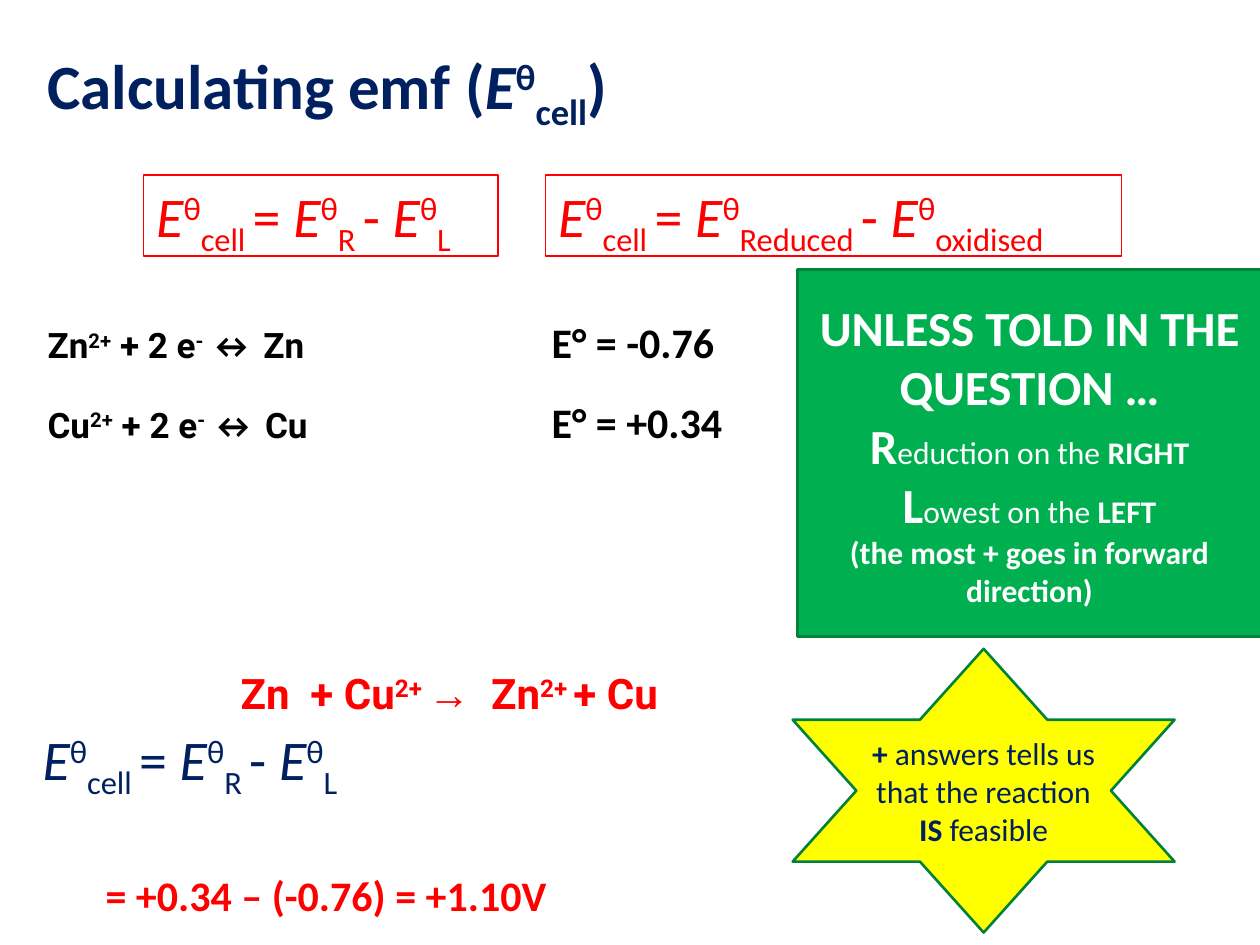
from lxml import etree
from pptx import Presentation
from pptx.dml.color import RGBColor
from pptx.enum.shapes import MSO_SHAPE
from pptx.enum.text import MSO_ANCHOR, PP_ALIGN
from pptx.oxml.ns import qn
from pptx.util import Cm, Pt

RECTANGLE, STAR = MSO_SHAPE.RECTANGLE, MSO_SHAPE.STAR_6_POINT
TOP, MIDDLE = MSO_ANCHOR.TOP, MSO_ANCHOR.MIDDLE
LEFT, CENTER = PP_ALIGN.LEFT, PP_ALIGN.CENTER

NAVY, RED, BLACK, WHITE = "002060", "FF0000", "000000", "FFFFFF"
GREEN, DARK_GREEN, YELLOW = "00B050", "00823B", "FFFF00"
MARGIN = 0.71
POTENTIAL_TAB = 10.16

SUPER, SUB = {"baseline": 30000}, {"baseline": -25000}
ITALIC, BOLD, PLAIN = {"italic": True}, {"bold": True}, {"bold": False}
CALIBRI = {"name": "Calibri"}


def cell_equation(first, second):
    runs = []
    for label, link in (("cell", "= "), (first, "- "), (second, "")):
        ending = " " if link else ""
        runs += [("E", ITALIC), ("θ", SUPER), (label + ending, SUB)]
        if link:
            runs.append((link, {}))
    return runs


def half_equation(metal, potential):
    return [
        (metal, {}), ("2+", SUPER), (" + 2 e", {}), ("- ", SUPER),
        ("↔", CALIBRI), (f" {metal}\t", {}),
        (f"E° = {potential}", {"name": "Calibri", "size": 24}),
        (" ", {"size": 28}),
    ]


def rule_line(initial, rest, side):
    return [(initial, {"size": 28, "bold": True}), (rest, {}), (side, BOLD)]


def font(name, size, color, bold=False):
    return {"name": name, "size": size, "color": color, "bold": bold}


HALF_FONT = font("Roboto", 20, BLACK, True)
FORMULA_FONT = font("Calibri", 32, RED)
FORMULA_BOX = {"preset": RECTANGLE, "line": (RED, 0.75)}

ITEMS = [
    {"at": (MARGIN, 0.91, 22.86, 1.78), "anchor": MIDDLE,
     "font": font("Calibri", 36, NAVY, True),
     "paragraphs": [[("Calculating emf (", {}), ("E", ITALIC), ("θ", SUPER),
                     ("cell", SUB), (")", {})]]},
    {"at": (MARGIN, 6.12, 14.88, 1.45), "font": HALF_FONT, "tab": POTENTIAL_TAB,
     "paragraphs": [half_equation("Zn", "-0.76")]},
    {"at": (MARGIN, 7.72, 14.88, 1.45), "font": HALF_FONT, "tab": POTENTIAL_TAB,
     "paragraphs": [half_equation("Cu", "+0.34")]},
    {"at": (4.6, 13.34, 12.6, 1.27), "font": font("Roboto", 24, RED, True),
     "paragraphs": [[("Zn  + Cu", {}), ("2+ ", SUPER),
                     ("→", {"name": "Times New Roman"}), ("  Zn", {}),
                     ("2+ ", SUPER), ("+ Cu", {})]]},
    {"at": (0.61, 15.11, 15, 3.5), "font": font("Calibri", 32, NAVY),
     "paragraphs": [cell_equation("R", "L"),
                    [("= +0.34 – (-0.76) = +1.10V", font("Calibri", 24, RED, True))]],
     "line_spacing": 26, "space_before": (6, 42), "indent": (0, 1.27)},
    {"at": (2.9, 3.53, 7.14, 1.63), "font": FORMULA_FONT, **FORMULA_BOX,
     "paragraphs": [cell_equation("R", "L")]},
    {"at": (11, 3.53, 11.61, 1.63), "font": FORMULA_FONT, **FORMULA_BOX,
     "paragraphs": [cell_equation("Reduced", "oxidised")]},
    {"at": (16.08, 5.44, 9.35, 7.39), "preset": RECTANGLE, "fill": GREEN,
     "line": (DARK_GREEN, 1.5), "anchor": MIDDLE, "align": CENTER,
     "font": font("Calibri", 18, WHITE),
     "paragraphs": [
         [("UNLESS TOLD IN THE QUESTION …", {"size": 28, "bold": True})],
         rule_line("R", "eduction on the ", "RIGHT"),
         rule_line("L", "owest on the ", "LEFT"),
         [("(the most + goes in forward direction)", BOLD)]]},
    {"at": (15.98, 13.08, 7.7, 5.72), "preset": STAR, "fill": YELLOW,
     "line": (DARK_GREEN, 1.5), "anchor": MIDDLE, "align": CENTER,
     "font": font("Calibri", 18, NAVY),
     "paragraphs": [[("+", BOLD), (" answers tells us that the reaction ", PLAIN),
                     ("IS", BOLD), (" feasible", PLAIN)]]},
]


def rgb(value):
    return RGBColor.from_string(value)


def add_run(paragraph, text, values):
    run = paragraph.add_run()
    run.text = text
    for key, value in values.items():
        if key == "color":
            run.font.color.rgb = rgb(value)
        elif key == "baseline":
            run._r.get_or_add_rPr().set("baseline", str(value))
        else:
            setattr(run.font, key, Pt(value) if key == "size" else value)


def add_tab_stop(paragraph, position):
    tabs = etree.SubElement(paragraph._p.get_or_add_pPr(), qn("a:tabLst"))
    etree.SubElement(tabs, qn("a:tab"), pos=str(Cm(position)), algn="l")


def add_outline(slide, item):
    box = [Cm(length) for length in item["at"]]
    if "preset" not in item:
        return slide.shapes.add_textbox(*box)
    shape = slide.shapes.add_shape(item["preset"], *box)
    shape.shadow.inherit = False
    if "fill" in item:
        shape.fill.solid()
        shape.fill.fore_color.rgb = rgb(item["fill"])
    else:
        shape.fill.background()
    color, width = item["line"]
    shape.line.color.rgb = rgb(color)
    shape.line.width = Pt(width)
    return shape


def add_item(slide, item):
    frame = add_outline(slide, item).text_frame
    frame.word_wrap = True
    frame.vertical_anchor = item.get("anchor", TOP)
    for index, runs in enumerate(item["paragraphs"]):
        paragraph = frame.add_paragraph() if index else frame.paragraphs[0]
        paragraph.alignment = item.get("align", LEFT)
        if "line_spacing" in item:
            paragraph.line_spacing = Pt(item["line_spacing"])
            paragraph.space_before = Pt(item["space_before"][index])
            paragraph._p.get_or_add_pPr().set("marL", str(Cm(item["indent"][index])))
        if "tab" in item:
            add_tab_stop(paragraph, item["tab"])
        for text, values in runs:
            add_run(paragraph, text, {**item["font"], **values})


def main():
    presentation = Presentation()
    presentation.slide_width, presentation.slide_height = Cm(25.4), Cm(19.05)
    slide = presentation.slides.add_slide(presentation.slide_layouts[6])
    for item in ITEMS:
        add_item(slide, item)
    presentation.save("out.pptx")


if __name__ == "__main__":
    main()
